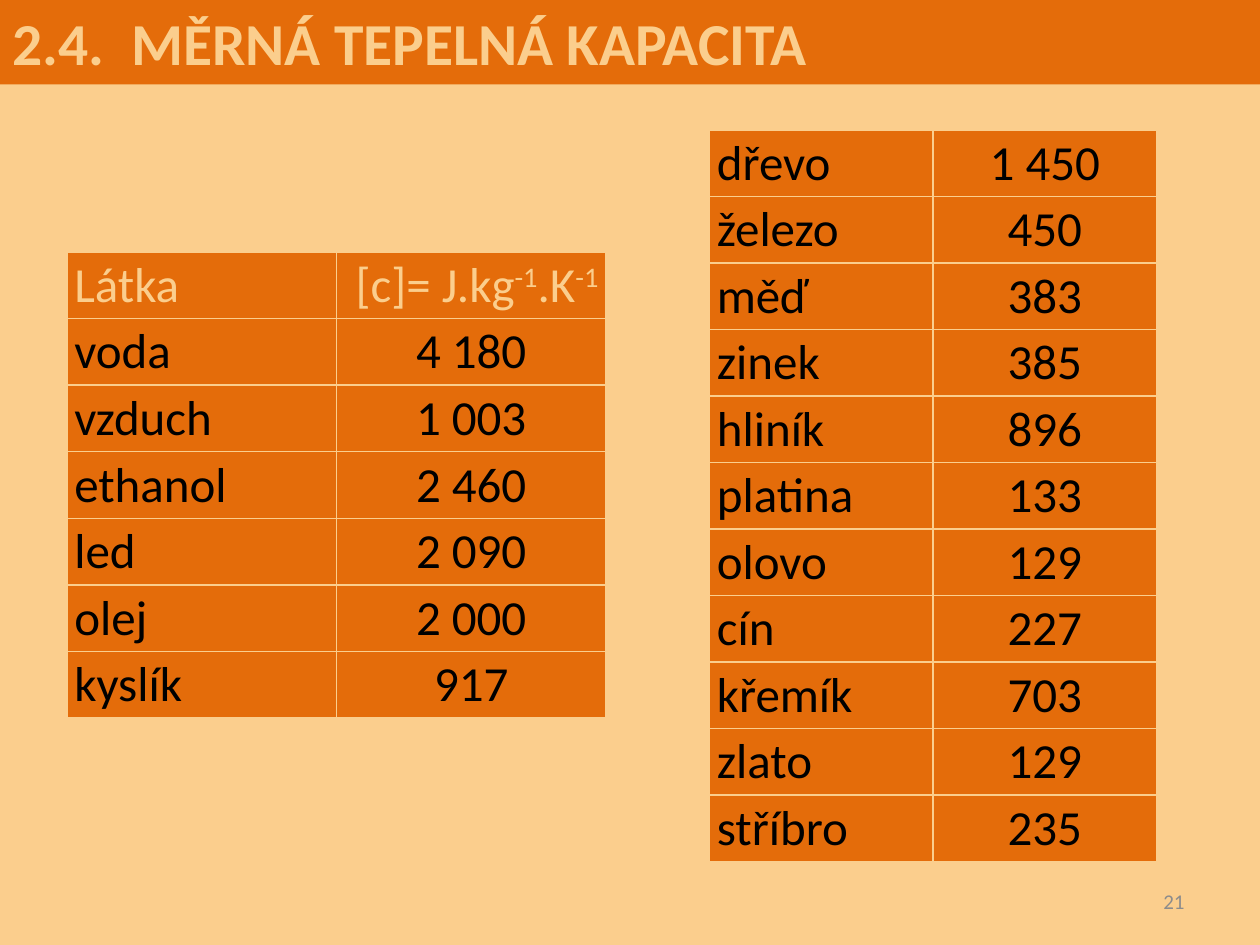
from lxml import etree
from pptx import Presentation
from pptx.dml.color import RGBColor
from pptx.enum import text
from pptx.oxml import ns
from pptx.util import Inches, Pt

ORANGE = RGBColor(0xE4, 0x6C, 0x0A)
SAND = RGBColor(0xFB, 0xCE, 0x8D)
BLACK = RGBColor(0, 0, 0)
GREY = RGBColor(0x8C, 0x8C, 0x8C)
LEFT, CENTER, RIGHT = text.PP_ALIGN.LEFT, text.PP_ALIGN.CENTER, text.PP_ALIGN.RIGHT


def write(tf, content, size=28, color=BLACK, bold=False, align=LEFT):
    p = tf.paragraphs[0]
    p.alignment = align
    for i, part in enumerate(content.split("^")):
        r = p.add_run()
        r.text = part
        r.font.name = "Calibri"
        r.font.size = Pt(size)
        r.font.bold = bold
        r.font.color.rgb = color
        if i % 2:
            r.font._element.set("baseline", "30000")


def add_borders(cell, color):
    tcPr = cell._tc.get_or_add_tcPr()
    for i, side in enumerate(("lnL", "lnR", "lnT", "lnB")):
        ln = etree.Element(ns.qn("a:" + side), w=str(Pt(1)))
        fill = etree.SubElement(ln, ns.qn("a:solidFill"))
        etree.SubElement(fill, ns.qn("a:srgbClr"), val=str(color))
        tcPr.insert(i, ln)


prs = Presentation()
prs.slide_width, prs.slide_height = Inches(10), Inches(7.5)
s = prs.slides.add_slide(prs.slide_layouts[5])
s.background.fill.solid()
s.background.fill.fore_color.rgb = SAND

title = s.shapes.title
title.left, title.top, title.width, title.height = 0, 0, Inches(10), Inches(0.67)
title.fill.solid()
title.fill.fore_color.rgb = ORANGE
tf = title.text_frame
tf.auto_size = text.MSO_AUTO_SIZE.NONE
tf.vertical_anchor = text.MSO_ANCHOR.MIDDLE
write(tf, "2.4.  MĚRNÁ TEPELNÁ KAPACITA", size=34, color=SAND, bold=True)

sp = s.shapes.add_textbox(Inches(7.17), Inches(6.95), Inches(2.33), Inches(0.4))
tf = sp.text_frame
tf.word_wrap = True
tf.vertical_anchor = text.MSO_ANCHOR.MIDDLE
write(tf, "21", size=12, color=GREY, align=RIGHT)

liquids = [
    ("Látka", "[c]= J.kg^-1^.K^-1"),
    ("voda", "4 180"),
    ("vzduch", "1 003"),
    ("ethanol", "2 460"),
    ("led", "2 090"),
    ("olej", "2 000"),
    ("kyslík", "917"),
]
solids = [
    ("dřevo", "1 450"),
    ("železo", "450"),
    ("měď", "383"),
    ("zinek", "385"),
    ("hliník", "896"),
    ("platina", "133"),
    ("olovo", "129"),
    ("cín", "227"),
    ("křemík", "703"),
    ("zlato", "129"),
    ("stříbro", "235"),
]

for rows, x, y, w, h in [(liquids, 0.53, 2, 4.28, 3.7), (solids, 5.63, 1.03, 3.55, 5.81)]:
    frame = s.shapes.add_table(len(rows), 2, Inches(x), Inches(y), Inches(w), Inches(h))
    table = frame.table
    table.horz_banding = False
    table.first_row = rows is liquids
    for i, row in enumerate(rows):
        header = row[0] == "Látka"
        for j, value in enumerate(row):
            cell = table.cell(i, j)
            cell.fill.solid()
            cell.fill.fore_color.rgb = ORANGE
            cell.margin_left = cell.margin_right = Inches(0.06)
            cell.margin_top = cell.margin_bottom = Inches(0.03)
            cell.vertical_anchor = text.MSO_ANCHOR.MIDDLE
            add_borders(cell, SAND)
            align = LEFT if j == 0 else RIGHT if header else CENTER
            write(cell.text_frame, value, color=SAND if header else BLACK, align=align)

prs.save("out.pptx")
